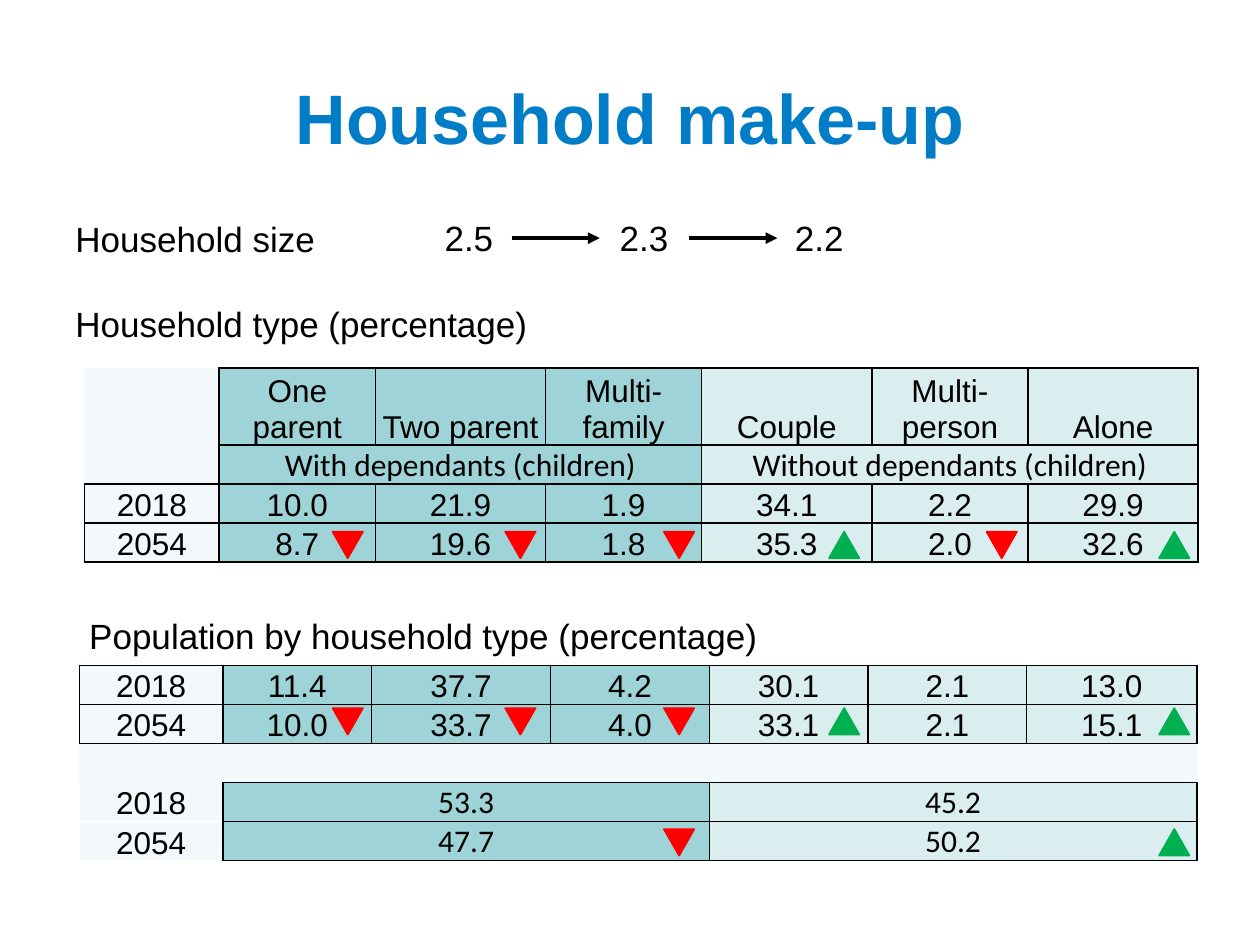
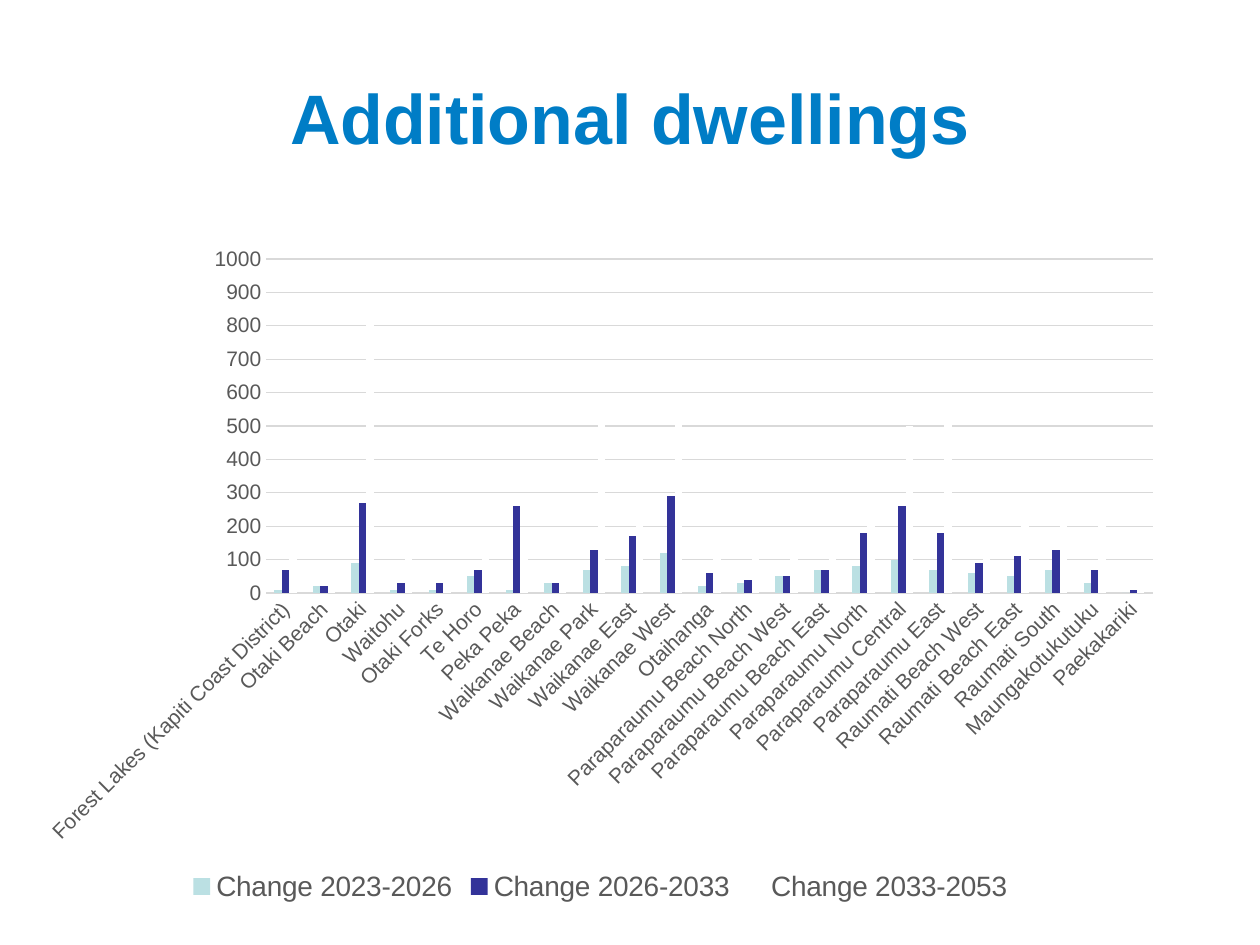
from lxml import etree
from pptx import Presentation
from pptx.chart.data import CategoryChartData
from pptx.dml.color import RGBColor
from pptx.enum.chart import XL_CHART_TYPE, XL_LEGEND_POSITION, XL_TICK_MARK
from pptx.enum.shapes import MSO_CONNECTOR, MSO_SHAPE
from pptx.enum.text import MSO_ANCHOR, PP_ALIGN
from pptx.oxml.ns import qn
from pptx.util import Inches, Pt

BLACK = RGBColor(0x00, 0x00, 0x00)
WHITE = RGBColor(0xFF, 0xFF, 0xFF)
TITLE_BLUE = RGBColor(0x00, 0x7D, 0xC6)
TEAL = RGBColor(0x9E, 0xD3, 0xD7)
PALE_TEAL = RGBColor(0xDA, 0xED, 0xEF)
FAINT_TEAL = RGBColor(0xF3, 0xF9, 0xFA)
FALL_RED = RGBColor(0xFF, 0x00, 0x00)
RISE_GREEN = RGBColor(0x00, 0xB0, 0x50)
AXIS_TEXT = RGBColor(0x59, 0x59, 0x59)
GRID_GREY = RGBColor(0xD9, 0xD9, 0xD9)
SERIES_COLOURS = [RGBColor(0xBB, 0xE0, 0xE3), RGBColor(0x33, 0x33, 0x99), WHITE]

LEFT, CENTRE = PP_ALIGN.LEFT, PP_ALIGN.CENTER
TOP, MIDDLE, BOTTOM = MSO_ANCHOR.TOP, MSO_ANCHOR.MIDDLE, MSO_ANCHOR.BOTTOM
TRIANGLE = MSO_SHAPE.ISOSCELES_TRIANGLE
STRAIGHT = MSO_CONNECTOR.STRAIGHT
CLUSTERED = XL_CHART_TYPE.COLUMN_CLUSTERED
LEGEND_BOTTOM = XL_LEGEND_POSITION.BOTTOM
NO_TICK = XL_TICK_MARK.NONE

GRID_COLUMNS, GRID_ROWS = 10, 7.5
GROUP_STARTS = (1, 4)  # with dependants, without dependants
GROUP_SIZE = 3
COLUMN_FILLS = [FAINT_TEAL] + [TEAL] * GROUP_SIZE + [PALE_TEAL] * GROUP_SIZE
ALL_BLACK = dict.fromkeys("LRTB", BLACK)
TREND_COLUMNS = [2.64, 4.01, 5.27, 6.58, 7.83, 9.2]

HOUSEHOLD_TYPES = [
    ["", "One parent", "Two parent", "Multi-family", "Couple", "Multi-person", "Alone"],
    ["", "With dependants (children)", "", "", "Without dependants (children)", "", ""],
    ["2018", "10.0", "21.9", "1.9", "34.1", "2.2", "29.9"],
    ["2054", "8.7", "19.6", "1.8", "35.3", "2.0", "32.6"],
]
POPULATION = [
    ["2018", "11.4", "37.7", "4.2", "30.1", "2.1", "13.0"],
    ["2054", "10.0", "33.7", "4.0", "33.1", "2.1", "15.1"],
    [""] * 7,
    ["2018", "53.3", "", "", "45.2", "", ""],
    ["2054", "47.7", "", "", "50.2", "", ""],
]
# Area, then the change in 2023-2026, 2026-2033 and 2033-2053
DWELLINGS = [
    ("Forest Lakes (Kapiti Coast District)", 10, 70, 140),
    ("Otaki Beach", 20, 20, 20),
    ("Otaki", 90, 270, 860),
    ("Waitohu", 10, 30, 170),
    ("Otaki Forks", 10, 30, 50),
    ("Te Horo", 50, 70, 120),
    ("Peka Peka", 10, 260, 150),
    ("Waikanae Beach", 30, 30, 60),
    ("Waikanae Park", 70, 130, 560),
    ("Waikanae East", 80, 170, 300),
    ("Waikanae West", 120, 290, 510),
    ("Otaihanga", 20, 60, 180),
    ("Paraparaumu Beach North", 30, 40, 170),
    ("Paraparaumu Beach West", 50, 50, 170),
    ("Paraparaumu Beach East", 70, 70, 170),
    ("Paraparaumu North", 80, 180, 280),
    ("Paraparaumu Central", 100, 260, 500),
    ("Paraparaumu East", 70, 180, 520),
    ("Raumati Beach West", 60, 90, 170),
    ("Raumati Beach East", 50, 110, 230),
    ("Raumati South", 70, 130, 240),
    ("Maungakotukutuku", 30, 70, 260),
    ("Paekakariki", 0, 10, 40),
]
PERIODS = ["Change 2023-2026", "Change 2026-2033", "Change 2033-2053"]


def set_font(font, size, colour=BLACK, name="Arial", bold=False):
    font.size, font.name, font.bold = Pt(size), name, bold
    font.color.rgb = colour


def set_borders(cell, sides):
    """Draw the sides given as {side: colour}; leave the others open."""
    properties = cell._tc.get_or_add_tcPr()
    for position, side in enumerate("LRTB"):
        line = etree.Element(qn(f"a:ln{side}"), w=str(Pt(1)))
        if side in sides:
            solid = etree.SubElement(line, qn("a:solidFill"))
            etree.SubElement(solid, qn("a:srgbClr"), val=str(sides[side]))
        else:
            etree.SubElement(line, qn("a:noFill"))
        properties.insert(position, line)


class Deck:
    """The shared style, and the slide being filled, on a grid of columns and rows."""

    def __init__(self):
        self.presentation = Presentation()
        self.presentation.slide_width = Inches(10)
        self.presentation.slide_height = Inches(7.5)
        self.shapes = None

    def x(self, columns):
        return round(self.presentation.slide_width * columns / GRID_COLUMNS)

    def y(self, rows):
        return round(self.presentation.slide_height * rows / GRID_ROWS)

    def box(self, left, top, width, height):
        return self.x(left), self.y(top), self.x(width), self.y(height)

    def slide(self, title):
        blank = self.presentation.slide_layouts[6]
        self.shapes = self.presentation.slides.add_slide(blank).shapes
        self.text(title, (0.5, 0.3, 9, 1.25), 40, TITLE_BLUE, True, CENTRE, MIDDLE)

    def text(self, words, area, size=20, colour=BLACK, bold=False,
             align=LEFT, anchor=TOP, tab_stops=()):
        frame = self.shapes.add_textbox(*self.box(*area)).text_frame
        frame.word_wrap = True
        frame.vertical_anchor = anchor
        paragraph = frame.paragraphs[0]
        paragraph.text = words
        paragraph.alignment = align
        if tab_stops:
            stops = etree.SubElement(paragraph._p.get_or_add_pPr(), qn("a:tabLst"))
            for stop in tab_stops:
                etree.SubElement(stops, qn("a:tab"), pos=str(self.x(stop)), algn="l")
        set_font(paragraph.font, size, colour, bold=bold)

    def arrow(self, left, top, length):
        y = self.y(top)
        line = self.shapes.add_connector(STRAIGHT, self.x(left), y, self.x(left + length), y)
        line.line.color.rgb = BLACK
        line.line.width = Pt(2.25)
        etree.SubElement(line.line._get_or_add_ln(), qn("a:tailEnd"), type="triangle")
        etree.SubElement(line._element.spPr, qn("a:effectLst"))

    def trend(self, left, top, rises):
        mark = self.shapes.add_shape(TRIANGLE, *self.box(left, top, 0.24, 0.21))
        mark.shadow.inherit = False
        mark.rotation = 0 if rises else 180
        mark.fill.solid()
        mark.fill.fore_color.rgb = mark.line.color.rgb = RISE_GREEN if rises else FALL_RED
        mark.line.width = Pt(1)

    def trends(self, earlier, later, top):
        """Mark each change between two table rows, at the end of its group if merged."""
        merged = "" in later
        for i, (before, after) in enumerate(zip(earlier[1:], later[1:])):
            if before != after:
                column = i + GROUP_SIZE - 1 if merged else i
                self.trend(TREND_COLUMNS[column], top, float(after) > float(before))

    def table(self, rows, left, top, widths, heights, merged_rows, open_borders):
        """open_borders maps (row, column) to the sides of cells without a full frame."""
        area = self.box(left, top, sum(widths), sum(heights))
        table = self.shapes.add_table(len(rows), len(widths), *area).table
        table.first_row = table.horz_banding = False
        for column, width in zip(table.columns, widths):
            column.width = self.x(width)
        for row, height in zip(table.rows, heights):
            row.height = self.y(height)
        for r, row in enumerate(rows):
            for c, words in enumerate(row):
                cell = table.cell(r, c)
                cell.margin_left = cell.margin_right = cell.margin_top = Inches(0.01)
                cell.margin_bottom = 0
                cell.vertical_anchor = BOTTOM
                cell.fill.solid()
                cell.fill.fore_color.rgb = COLUMN_FILLS[c] if any(row) else FAINT_TEAL
                set_borders(cell, open_borders.get((r, c), ALL_BLACK))
                paragraph = cell.text_frame.paragraphs[0]
                paragraph.text = words
                paragraph.alignment = CENTRE
                in_group = r in merged_rows and c > 0
                set_font(paragraph.font, 18, name="Calibri" if in_group else "Arial")
        for r in merged_rows:
            for start in GROUP_STARTS:
                table.cell(r, start).merge(table.cell(r, start + GROUP_SIZE - 1))

    def column_chart(self, area, records, names, colours):
        data = CategoryChartData()
        data.categories, *columns = zip(*records)
        for name, values in zip(names, columns):
            data.add_series(name, values)
        chart = self.shapes.add_chart(CLUSTERED, *self.box(*area), data).chart
        set_font(chart.font, 10)
        chart.has_title = False
        chart.has_legend = True
        chart.legend.position = LEGEND_BOTTOM
        chart.legend.include_in_layout = False
        set_font(chart.legend.font, 16, AXIS_TEXT)

        plot = chart.plots[0]
        plot.gap_width, plot.overlap, plot.vary_by_categories = 219, 0, False
        for series, colour in zip(plot.series, colours):
            series.format.fill.solid()
            series.format.fill.fore_color.rgb = colour
            series.invert_if_negative = False

        areas, dwellings = chart.category_axis, chart.value_axis
        for axis in (areas, dwellings):
            axis.major_tick_mark = axis.minor_tick_mark = NO_TICK
            set_font(axis.tick_labels.font, 12, AXIS_TEXT)
        dwellings.minimum_scale, dwellings.maximum_scale, dwellings.major_unit = 0, 1000, 100
        dwellings.format.line.fill.background()
        dwellings.has_major_gridlines = True
        for line in (areas.format.line, dwellings.major_gridlines.format.line):
            line.color.rgb = GRID_GREY
            line.width = Pt(0.75)
        label_body = areas._element.find(qn("c:txPr")).find(qn("a:bodyPr"))
        label_body.set("rot", str(-45 * 60000))


def household_slide(deck):
    deck.slide("Household make-up")
    deck.text("Household size", (0.5, 1.68, 2.77, 0.44))
    deck.text("2.5\t2.3\t2.2", (3.43, 1.67, 7.15, 0.44), tab_stops=(1.39, 2.78))
    for step in range(2):
        deck.arrow(4.06 + 1.41 * step, 1.89, 0.7)

    deck.text("Household type (percentage)", (0.5, 2.35, 4.03, 0.44))
    deck.table(HOUSEHOLD_TYPES, 0.67, 2.92,
               [1.07, 1.24, 1.35, 1.24, 1.35, 1.24, 1.35], [0.57, 0.31, 0.31, 0.31],
               merged_rows=[1],
               open_borders={(0, 0): {"R": BLACK}, (1, 0): {"R": BLACK, "B": BLACK}})
    deck.trends(*HOUSEHOLD_TYPES[2:], top=4.22)

    deck.text("Population by household type (percentage)", (0.61, 4.83, 6.36, 0.44))
    year_sides = {"L": WHITE, "R": BLACK, "B": WHITE}
    gap_row = {(2, c): {"T": BLACK, "B": BLACK} for c in range(1, 7)}
    deck.table(POPULATION, 0.63, 5.28,
               [1.14, 1.18, 1.42, 1.26, 1.26, 1.26, 1.35], [0.31] * 5,
               merged_rows=[3, 4],
               open_borders={(2, 0): {"T": BLACK}, **gap_row, (3, 0): year_sides,
                             (4, 0): {**year_sides, "T": WHITE}})
    deck.trends(*POPULATION[:2], top=5.62)
    deck.trends(
        [value for value in POPULATION[3]], POPULATION[4], top=6.58)


def dwellings_slide(deck):
    deck.slide("Additional dwellings")
    deck.column_chart((0.2, 1.86, 9.13, 5.34), DWELLINGS, PERIODS, SERIES_COLOURS)


def main():
    deck = Deck()
    household_slide(deck)
    dwellings_slide(deck)
    deck.presentation.save("out.pptx")


if __name__ == "__main__":
    main()
